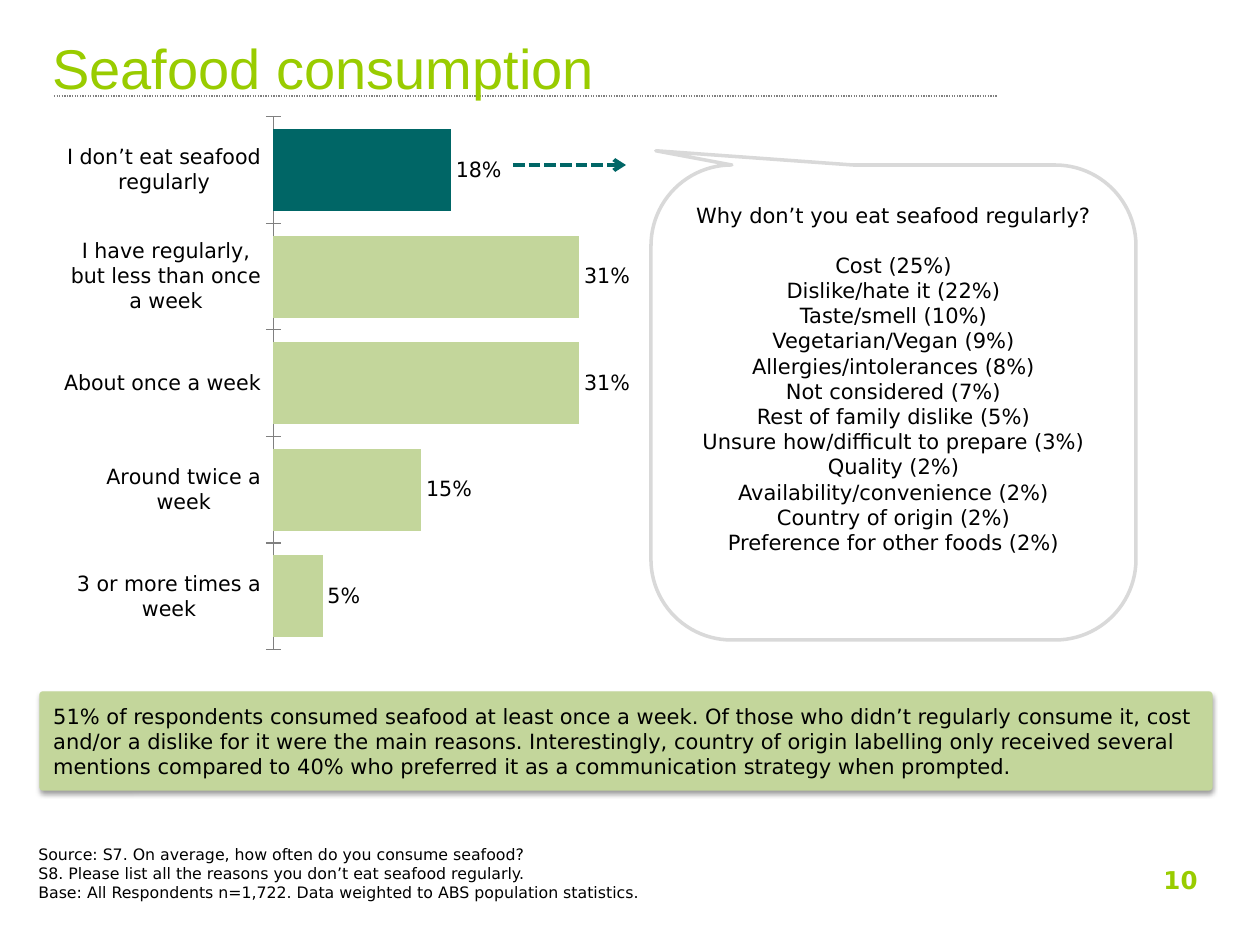
import pptx
import pptx.chart.data
import pptx.dml.color
import pptx.enum.chart
import pptx.enum.dml
import pptx.enum.shapes
import pptx.enum.text
import pptx.oxml
import pptx.oxml.ns
import pptx.util

PX = 914400 / 126
COLORS = {"lime": "99CC00", "sage": "C3D69B", "teal": "006666",
          "grey": "808080", "pale": "D9D9D9", "black": "000000"}
SANS = "DejaVu Sans"
A_NS = pptx.oxml.ns.nsdecls("a")
SHAPES = pptx.enum.shapes.MSO_SHAPE
ALIGN = pptx.enum.text.PP_ALIGN
ANCHOR = pptx.enum.text.MSO_ANCHOR
DASH = pptx.enum.dml.MSO_LINE

FREQS = [("I don’t eat seafood regularly", 0.18),
         ("I have regularly, but less than once a week", 0.31),
         ("About once a week", 0.31),
         ("Around twice a week", 0.15),
         ("3 or more times a week", 0.05)]
REASONS = ["Cost (25%)", "Dislike/hate it (22%)", "Taste/smell (10%)",
           "Vegetarian/Vegan (9%)", "Allergies/intolerances (8%)",
           "Not considered (7%)", "Rest of family dislike (5%)",
           "Unsure how/difficult to prepare (3%)", "Quality (2%)",
           "Availability/convenience (2%)", "Country of origin (2%)",
           "Preference for other foods (2%)"]
FINDING = ("51% of respondents consumed seafood at least once a week. Of those who "
           "didn’t regularly consume it, cost and/or a dislike for it were the main "
           "reasons. Interestingly, country of origin labelling only received several "
           "mentions compared to 40% who preferred it as a communication strategy "
           "when prompted.")
SOURCES = ["Source: S7. On average, how often do you consume seafood?",
           "S8. Please list all the reasons you don’t eat seafood regularly.",
           "Base: All Respondents n=1,722. Data weighted to ABS population statistics."]


def px(*vals):
    return [round(val * PX) for val in vals]


def rgb(name):
    return pptx.dml.color.RGBColor.from_string(COLORS[name])


def style(font, size, color="black", face=SANS, bold=False):
    font.size = pptx.util.Pt(size)
    font.name = face
    font.bold = bold
    font.color.rgb = rgb(color)


def write(shape, lines, size, color="black", face=SANS, bold=False,
          align=ALIGN.LEFT, anchor=ANCHOR.TOP):
    frame = shape.text_frame
    frame.word_wrap = True
    frame.vertical_anchor = anchor
    frame.text = "\n".join(lines)
    for para in frame.paragraphs:
        para.alignment = align
        for run in para.runs:
            style(run.font, size, color, face, bold)


def add_text(slide, box, lines, size, **look):
    write(slide.shapes.add_textbox(*px(*box)), lines, size, **look)


def add_line(slide, ends, color, width, dash):
    kind = pptx.enum.shapes.MSO_CONNECTOR.STRAIGHT
    line = slide.shapes.add_connector(kind, *px(*ends))
    line.line.color.rgb = rgb(color)
    line.line.width = pptx.util.Pt(width)
    line.line.dash_style = dash
    line._element.spPr.append(pptx.oxml.parse_xml(f"<a:effectLst {A_NS}/>"))
    return line


def add_arrow(slide, ends):
    line = add_line(slide, ends, "teal", 2.25, DASH.SQUARE_DOT)
    line.line._get_or_add_ln().append(
        pptx.oxml.parse_xml(f'<a:tailEnd {A_NS} type="arrow"/>'))


def add_panel(slide, kind, box, adjust, edge, width):
    shape = slide.shapes.add_shape(kind, *px(*box))
    shape.shadow.inherit = False
    for spot, val in enumerate(adjust):
        shape.adjustments[spot] = val
    shape.line.color.rgb = rgb(edge)
    shape.line.width = pptx.util.Pt(width)
    return shape


def add_callout(slide):
    shape = add_panel(slide, SHAPES.ROUNDED_RECTANGULAR_CALLOUT,
                      (651, 165, 485, 475), (-0.49, -0.53, 0.17), "pale", 2)
    shape.fill.background()
    write(shape, ["Why don’t you eat seafood regularly?"] + REASONS, 12,
          align=ALIGN.CENTER)
    shape.text_frame.margin_top = px(14)[0]
    shape.text_frame.paragraphs[0].space_after = pptx.util.Pt(14)


def add_banner(slide):
    shape = add_panel(slide, SHAPES.ROUNDED_RECTANGLE, (40, 692, 1172, 98),
                      (0.03,), "sage", 0.75)
    shape.fill.solid()
    shape.fill.fore_color.rgb = rgb("sage")
    blur, dist = pptx.util.Pt(3.1), pptx.util.Pt(1.6)
    effects = shape._element.spPr.find(pptx.oxml.ns.qn("a:effectLst"))
    effects.append(pptx.oxml.parse_xml(
        f'<a:outerShdw {A_NS} blurRad="{blur}" dist="{dist}" dir="5400000" '
        f'rotWithShape="0"><a:srgbClr val="{COLORS["black"]}">'
        '<a:alpha val="38000"/></a:srgbClr></a:outerShdw>'))
    write(shape, [FINDING], 12, anchor=ANCHOR.MIDDLE)


def fix_plot(chart, x, y, w, h):
    """Pin the inner plot area to fractions of the chart."""
    area = chart._chartSpace.chart.plotArea
    for old in area.findall(pptx.oxml.ns.qn("c:layout")):
        area.remove(old)
    area.insert(0, pptx.oxml.parse_xml(
        f'<c:layout {pptx.oxml.ns.nsdecls("c")}><c:manualLayout>'
        '<c:layoutTarget val="inner"/><c:xMode val="edge"/><c:yMode val="edge"/>'
        f'<c:x val="{x}"/><c:y val="{y}"/><c:w val="{w}"/><c:h val="{h}"/>'
        '</c:manualLayout></c:layout>'))


def add_bars(slide):
    data = pptx.chart.data.CategoryChartData(number_format="0%")
    data.categories = [name for name, _ in FREQS]
    data.add_series("Series 1", [val for _, val in FREQS])
    kind = pptx.enum.chart.XL_CHART_TYPE.BAR_CLUSTERED
    chart = slide.shapes.add_chart(kind, *px(64, 116, 566, 556), data).chart
    chart.has_legend = False
    chart.has_title = False
    style(chart.font, 18)
    fix_plot(chart, 0.36, 0, 0.64, 0.96)

    cats = chart.category_axis
    cats.reverse_order = True
    cats.major_tick_mark = pptx.enum.chart.XL_TICK_MARK.CROSS
    cats.format.line.color.rgb = rgb("grey")
    style(cats.tick_labels.font, 12)
    vals = chart.value_axis
    vals.visible = False
    vals.has_major_gridlines = False
    vals.minimum_scale, vals.maximum_scale = 0, 0.36

    plot = chart.plots[0]
    plot.gap_width = 30
    plot.vary_by_categories = False
    bars = plot.series[0]
    for part, color in ((bars, "sage"), (bars.points[0], "teal")):
        part.format.fill.solid()
        part.format.fill.fore_color.rgb = rgb(color)
    labels = bars.data_labels
    labels.show_value = True
    labels.number_format = "0%"
    labels.number_format_is_linked = False
    labels.position = pptx.enum.chart.XL_LABEL_POSITION.OUTSIDE_END
    style(labels.font, 12)


def main():
    deck = pptx.Presentation()
    deck.slide_width, deck.slide_height = px(1260, 945)
    slide = deck.slides.add_slide(deck.slide_layouts[6])
    add_line(slide, (54, 96, 997, 96), "grey", 0.75, DASH.ROUND_DOT)
    add_text(slide, (916, 859, 294, 66), ["10"], 14, color="lime", bold=True,
             align=ALIGN.RIGHT)
    add_text(slide, (26, 839, 1043, 76), SOURCES, 9)
    add_banner(slide)
    add_arrow(slide, (513, 165, 626, 165))
    add_callout(slide)
    add_bars(slide)
    add_text(slide, (40, 11, 925, 113), ["Seafood consumption"], 32,
             color="lime", face="Arial", anchor=ANCHOR.MIDDLE)
    deck.save("out.pptx")


if __name__ == "__main__":
    main()
